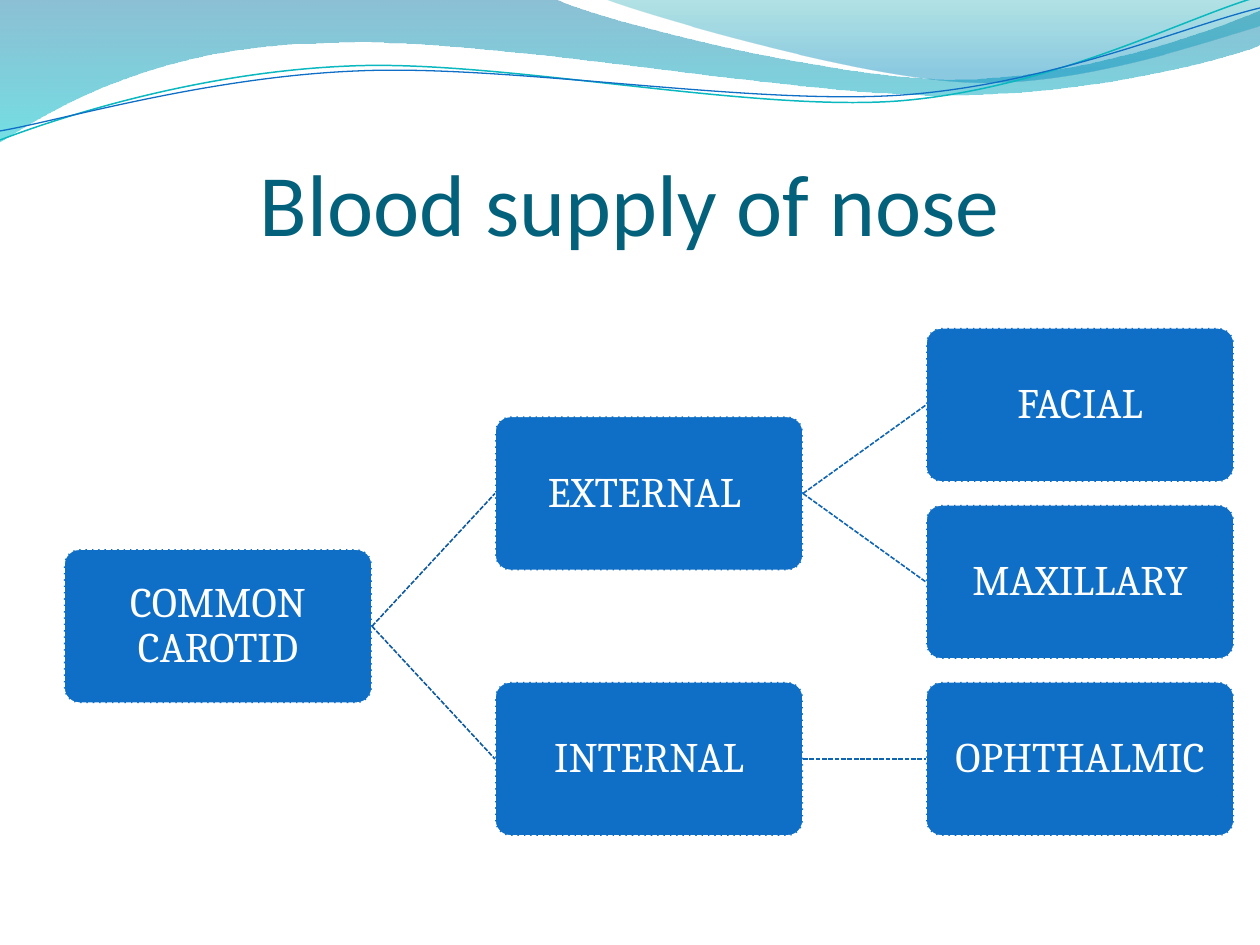
from dataclasses import dataclass

from lxml import etree
from pptx import Presentation
from pptx.dml.color import RGBColor
from pptx.dml.line import LineFormat
from pptx.enum.dml import MSO_LINE
from pptx.enum.shapes import MSO_CONNECTOR, MSO_SHAPE
from pptx.enum.text import MSO_ANCHOR, PP_ALIGN
from pptx.oxml.ns import qn
from pptx.shapes.autoshape import Shape
from pptx.slide import Slide
from pptx.text.text import TextFrame
from pptx.util import Emu, Pt

CENTER = PP_ALIGN.CENTER
MIDDLE = MSO_ANCHOR.MIDDLE
BOTTOM = MSO_ANCHOR.BOTTOM
ROUNDED = MSO_SHAPE.ROUNDED_RECTANGLE
STRAIGHT = MSO_CONNECTOR.STRAIGHT
DASH = MSO_LINE.SQUARE_DOT

WHITE = RGBColor(0xFF, 0xFF, 0xFF)
BLUE = RGBColor(0x0F, 0x6F, 0xC6)
DARK_BLUE = RGBColor(0x0C, 0x59, 0x9F)
MEDIUM_BLUE = RGBColor(0x0E, 0x65, 0xB4)
TITLE_TEAL = RGBColor(0x04, 0x61, 0x7B)
LINE_TEAL = RGBColor(0x0A, 0xB8, 0xBF)
BAND_TOP = RGBColor(0x00, 0x74, 0xA1)
BAND_BOTTOM = RGBColor(0x00, 0xC6, 0xCF)
CREST_TOP = RGBColor(0x00, 0xA1, 0xA9)
CREST_BOTTOM = RGBColor(0x00, 0x8B, 0xBF)

EMU_PER_PX = 914400 / 126
NODE_WIDTH, NODE_HEIGHT = 308, 154
TREE_LEFT, TREE_TOP = 64, 328
COLUMN_PITCH, ROW_PITCH = 431, 177
LINK_COLORS = (DARK_BLUE, MEDIUM_BLUE)

Point = tuple[int, int]


@dataclass(frozen=True)
class Stop:
    position: float
    color: RGBColor
    opacity: int


@dataclass(frozen=True)
class Wave:
    start: Point
    segments: tuple[tuple[Point, ...], ...]
    stops: tuple[Stop, ...] = ()
    line_color: RGBColor = BLUE
    line_width: float = 0.75


@dataclass(frozen=True)
class Artery:
    name: str
    branches: tuple["Artery", ...] = ()


WAVES = (
    Wave(
        (0, 0),
        (
            ((555, -1),),
            ((600, 21), (837, 79), (955, 79)),
            ((1075, 79), (1207, 33), (1260, 11)),
            ((1261, 45),),
            ((1239, 55), (1096, 96), (940, 95)),
            ((784, 95), (481, 35), (324, 43)),
            ((163, 45), (58, 105), (-1, 142)),
        ),
        (Stop(0, BAND_TOP, 45), Stop(1, BAND_BOTTOM, 55)),
    ),
    Wave(
        (604, -1),
        (
            ((641, 14), (859, 78), (969, 82)),
            ((1079, 87), (1211, 40), (1260, 26)),
            ((1260, 0),),
        ),
        (Stop(0, CREST_TOP, 30), Stop(0.8, CREST_BOTTOM, 45)),
    ),
    Wave(
        (0, 140),
        (
            ((60, 117), (199, 72), (349, 66)),
            ((498, 59), (747, 112), (898, 101)),
            ((1050, 89), (1182, 19), (1257, -3)),
        ),
        line_color=LINE_TEAL,
        line_width=0.85,
    ),
    Wave(
        (0, 131),
        (
            ((59, 121), (207, 77), (357, 71)),
            ((508, 64), (752, 106), (903, 95)),
            ((1053, 84), (1185, 26), (1260, 8)),
        ),
    ),
)

COMMON_CAROTID = Artery("COMMON CAROTID", (
    Artery("EXTERNAL ", (Artery("FACIAL"), Artery("MAXILLARY"))),
    Artery("INTERNAL", (Artery("OPHTHALMIC"),)),
))


def px(value: float) -> Emu:
    return Emu(round(value * EMU_PER_PX))


def bend_segments(shape: Shape, wave: Wave) -> None:
    lines = iter(list(shape.element.spPr.iter(qn("a:lnTo"))))
    for segment in wave.segments:
        first, *others = [next(lines) for _ in segment]
        if others:
            first.tag = qn("a:cubicBezTo")
            for line in others:
                first.append(line[0])
                line.getparent().remove(line)


def apply_gradient(shape: Shape, stops: tuple[Stop, ...]) -> None:
    shape.fill.gradient()
    shape.fill.gradient_angle = 270
    for gradient_stop, stop in zip(shape.fill.gradient_stops, stops):
        gradient_stop.position = stop.position
        gradient_stop.color.rgb = stop.color
    colors = shape.element.spPr.iter(qn("a:srgbClr"))
    for color, stop in zip(list(colors), stops):
        etree.SubElement(color, qn("a:alpha"), val=str(stop.opacity * 1000))


def draw_wave(slide: Slide, wave: Wave) -> None:
    points = [(px(x), px(y)) for segment in wave.segments for x, y in segment]
    builder = slide.shapes.build_freeform(*map(px, wave.start))
    builder.add_line_segments(points, close=bool(wave.stops))
    shape = builder.convert_to_shape()
    bend_segments(shape, wave)
    shape.shadow.inherit = False
    if wave.stops:
        apply_gradient(shape, wave.stops)
        shape.line.fill.background()
    else:
        shape.fill.background()
        shape.line.color.rgb = wave.line_color
        shape.line.width = Pt(wave.line_width)


def format_text(frame: TextFrame, text: str, size: int, font_name: str, color: RGBColor) -> None:
    frame.text = text
    frame.word_wrap = True
    paragraph = frame.paragraphs[0]
    paragraph.alignment = CENTER
    font = paragraph.runs[0].font
    font.size, font.name = Pt(size), font_name
    font.color.rgb = color


def draw_title(slide: Slide, text: str) -> None:
    title = slide.shapes.title
    title.left, title.top, title.width, title.height = map(px, (63, 97, 1134, 157))
    frame = title.text_frame
    format_text(frame, text, 50, "Calibri", TITLE_TEAL)
    frame.vertical_anchor = BOTTOM
    frame.margin_left = frame.margin_right = frame.margin_bottom = 0
    frame.margin_top = px(6)


def format_dashed_line(line: LineFormat, color: RGBColor) -> None:
    line.color.rgb = color
    line.width = Pt(0.9)
    line.dash_style = DASH


def draw_node(slide: Slide, name: str, left: float, top: float) -> Shape:
    node = slide.shapes.add_shape(ROUNDED, px(left), px(top), px(NODE_WIDTH), px(NODE_HEIGHT))
    node.adjustments[0] = 0.1
    node.shadow.inherit = False
    node.fill.solid()
    node.fill.fore_color.rgb = BLUE
    format_dashed_line(node.line, WHITE)
    frame = node.text_frame
    format_text(frame, name, 24, "Cambria", WHITE)
    frame.vertical_anchor = MIDDLE
    frame.margin_left = frame.margin_right = px(2)
    frame.margin_top = frame.margin_bottom = px(2)
    frame.paragraphs[0].line_spacing = 0.9
    return node


def draw_link(slide: Slide, parent: Shape, child: Shape, color: RGBColor) -> None:
    connector = slide.shapes.add_connector(STRAIGHT, 0, 0, 0, 0)
    connector.begin_connect(parent, 3)
    connector.end_connect(child, 1)
    format_dashed_line(connector.line, color)
    etree.SubElement(connector.element.spPr, qn("a:effectLst"))


def leaf_count(artery: Artery) -> int:
    return sum(map(leaf_count, artery.branches)) or 1


def row_of(artery: Artery, first_row: int) -> float:
    if not artery.branches:
        return first_row
    rows = []
    for branch in artery.branches:
        rows.append(row_of(branch, first_row))
        first_row += leaf_count(branch)
    return sum(rows) / len(rows)


def draw_artery(slide: Slide, artery: Artery, level: int = 0, first_row: int = 0) -> Shape:
    top = TREE_TOP + ROW_PITCH * row_of(artery, first_row)
    node = draw_node(slide, artery.name, TREE_LEFT + COLUMN_PITCH * level, top)
    for branch in artery.branches:
        child = draw_artery(slide, branch, level + 1, first_row)
        draw_link(slide, node, child, LINK_COLORS[level])
        first_row += leaf_count(branch)
    return node


presentation = Presentation()
presentation.slide_width, presentation.slide_height = px(1260), px(945)
slide = presentation.slides.add_slide(presentation.slide_layouts[5])
for wave in WAVES:
    draw_wave(slide, wave)
draw_title(slide, "Blood supply of nose")
draw_artery(slide, COMMON_CAROTID)
presentation.save("out.pptx")
